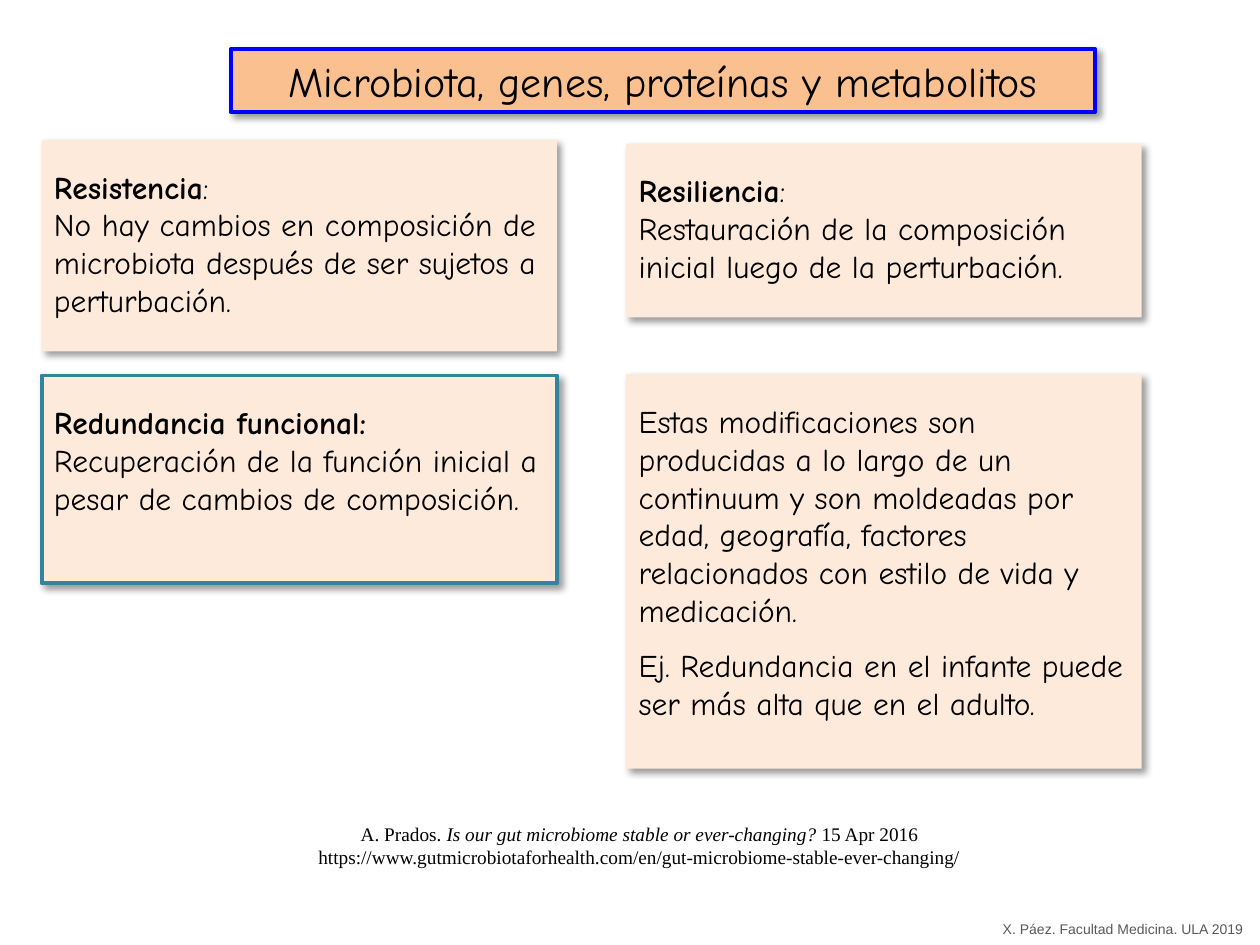
import dataclasses

import lxml.etree
import pptx
import pptx.dml.color
import pptx.enum.shapes
import pptx.enum.text
import pptx.oxml.ns
import pptx.util

Inches = pptx.util.Inches
Pt = pptx.util.Pt
ALIGN = pptx.enum.text.PP_ALIGN
ANCHOR = pptx.enum.text.MSO_ANCHOR


@dataclasses.dataclass(frozen=True)
class Theme:
    # Colours
    ink: str = "000000"
    muted: str = "595959"
    card: str = "FDEADA"
    title_fill: str = "FAC090"
    title_line: str = "0000FF"
    accent_line: str = "31859C"
    # Fonts and sizes in points
    main_font: str = "Comic Neue"
    source_font: str = "Times New Roman"
    footer_font: str = "Arial"
    title_size: float = 24
    body_size: float = 18
    source_size: float = 11
    footer_size: float = 8
    border: float = 2.25
    paragraph_gap: float = 10


def rgb(value):
    return pptx.dml.color.RGBColor.from_string(value)


class SlideBuilder:
    def __init__(self, deck, theme):
        self.theme = theme
        self.slide = deck.slides.add_slide(deck.slide_layouts[5])

    def format_run(self, run, font, size, color, bold=False, italic=False):
        run.font.name = font
        run.font.size = Pt(size)
        run.font.color.rgb = rgb(color)
        run.font.bold = bold
        run.font.italic = italic

    def add_shadow(self, shape):
        """Soft black shadow towards the lower right."""
        shape.shadow.inherit = False
        qn = pptx.oxml.ns.qn
        effects = shape._element.spPr.find(qn("a:effectLst"))
        shadow = lxml.etree.SubElement(
            effects, qn("a:outerShdw"), blurRad=str(Pt(4)), dist=str(Pt(3)),
            dir="2700000", algn="tl", rotWithShape="0")
        color = lxml.etree.SubElement(shadow, qn("a:srgbClr"), val="000000")
        lxml.etree.SubElement(color, qn("a:alpha"), val="40000")

    def paint(self, shape, fill, line):
        shape.fill.solid()
        shape.fill.fore_color.rgb = rgb(fill)
        if line:
            shape.line.color.rgb = rgb(line)
            shape.line.width = Pt(self.theme.border)
        else:
            shape.line.fill.background()
        self.add_shadow(shape)

    def title(self, text, left, top, width, height):
        theme = self.theme
        title = self.slide.shapes.title
        title.left, title.top = Inches(left), Inches(top)
        title.width, title.height = Inches(width), Inches(height)
        self.paint(title, theme.title_fill, theme.title_line)
        frame = title.text_frame
        frame.text = text
        frame.auto_size = pptx.enum.text.MSO_AUTO_SIZE.NONE
        frame.vertical_anchor = ANCHOR.MIDDLE
        para = frame.paragraphs[0]
        para.alignment = ALIGN.CENTER
        self.format_run(para.runs[0], theme.main_font, theme.title_size, theme.ink)

    def card(self, left, top, width, height, paragraphs, line=None, gap=0):
        """Each paragraph is a list of (text, bold) pairs."""
        theme = self.theme
        box = self.slide.shapes.add_shape(
            pptx.enum.shapes.MSO_SHAPE.RECTANGLE,
            Inches(left), Inches(top), Inches(width), Inches(height))
        self.paint(box, theme.card, line)
        frame = box.text_frame
        frame.word_wrap = True
        frame.vertical_anchor = ANCHOR.TOP
        frame.margin_top = Inches(0.22)
        for index, parts in enumerate(paragraphs):
            para = frame.add_paragraph() if index else frame.paragraphs[0]
            para.alignment = ALIGN.LEFT
            if index and gap:
                para.space_before = Pt(gap)
            for text, bold in parts:
                span = para.add_run()
                span.text = text
                self.format_run(span, theme.main_font, theme.body_size,
                                theme.ink, bold=bold)

    def note(self, left, top, width, height, paragraphs, font, size, color,
             align=ALIGN.LEFT, wrap=True):
        """Each paragraph is a list of (text, italic) pairs."""
        box = self.slide.shapes.add_textbox(
            Inches(left), Inches(top), Inches(width), Inches(height))
        frame = box.text_frame
        frame.word_wrap = wrap
        for index, parts in enumerate(paragraphs):
            para = frame.add_paragraph() if index else frame.paragraphs[0]
            para.alignment = align
            for text, italic in parts:
                span = para.add_run()
                span.text = text
                self.format_run(span, font, size, color, italic=italic)


def main():
    deck = pptx.Presentation()
    deck.slide_width, deck.slide_height = Inches(10), Inches(7.5)
    theme = Theme()
    page = SlideBuilder(deck, theme)

    page.title("Microbiota, genes, proteínas y metabolitos", 1.83, 0.39, 6.86, 0.5)

    # Two columns of definitions
    left_column, right_column, card_width = 0.33, 4.97, 4.09
    page.card(left_column, 1.11, card_width, 1.68, [
        [("Resistencia", True), (":", False)],
        [("No hay cambios en composición de microbiota después de ser "
          "sujetos a perturbación.", False)],
    ])
    page.card(right_column, 1.14, card_width, 1.38, [
        [("Resiliencia", True), (":", False)],
        [("Restauración de la composición inicial luego de la "
          "perturbación.", False)],
    ])
    page.card(left_column, 2.98, card_width, 1.65, [
        [("Redundancia funcional:", True)],
        [("Recuperación de la función inicial a pesar de cambios de "
          "composición.", False)],
    ], line=theme.accent_line)
    page.card(right_column, 2.97, card_width, 3.13, [
        [("Estas modificaciones son producidas a lo largo de un continuum y "
          "son moldeadas por edad, geografía, factores relacionados con "
          "estilo de vida y medicación.", False)],
        [("Ej. Redundancia en el infante puede ser más alta que en el "
          "adulto.", False)],
    ], gap=theme.paragraph_gap)

    # Source
    page.note(2.41, 6.48, 5.33, 0.47, [
        [("A. Prados. ", False),
         ("Is our gut microbiome stable or ever-changing?", True),
         (" 15 Apr 2016", False)],
        [("https://www.gutmicrobiotaforhealth.com/en/"
          "gut-microbiome-stable-ever-changing/", False)],
    ], theme.source_font, theme.source_size, theme.ink, align=ALIGN.CENTER)

    # Author line
    page.note(7.86, 7.26, 2.14, 0.24,
              [[("X. Páez. Facultad Medicina. ULA 2019", False)]],
              theme.footer_font, theme.footer_size, theme.muted, wrap=False)

    deck.save("out.pptx")


if __name__ == "__main__":
    main()
